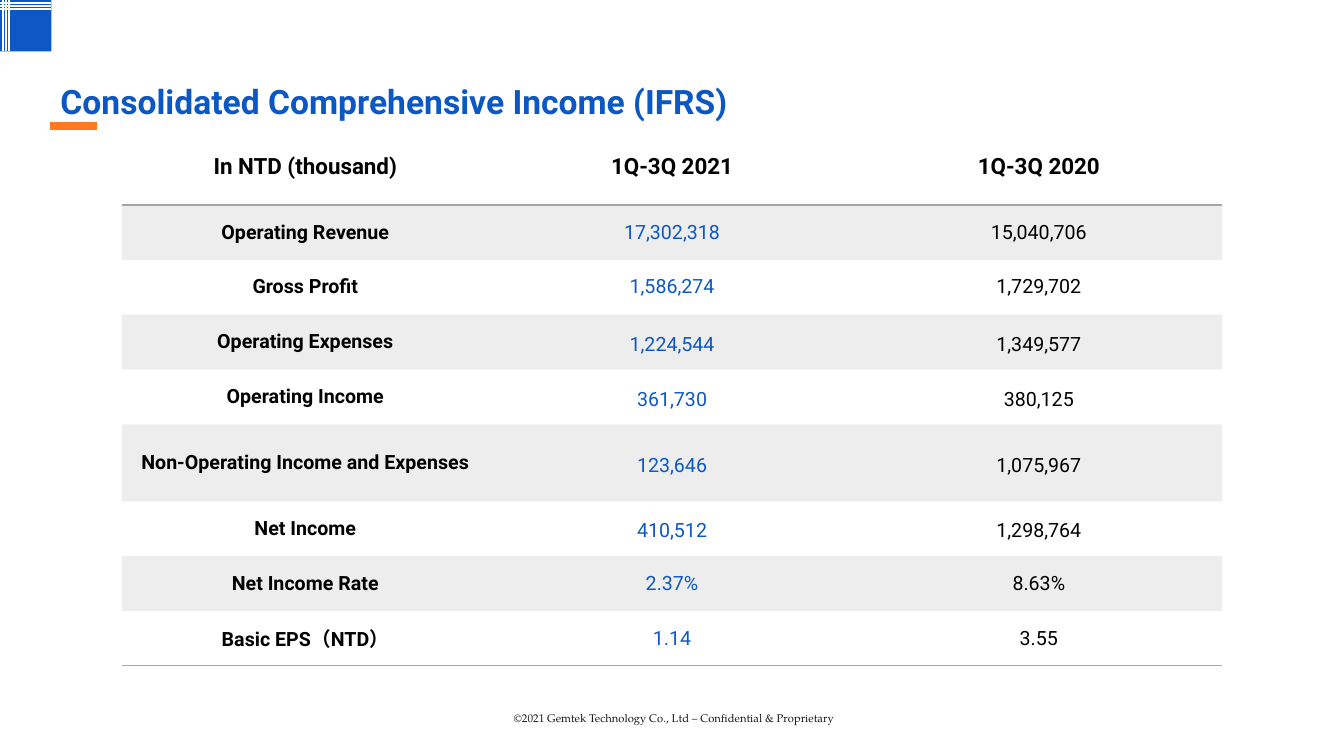
from dataclasses import dataclass

from lxml.etree import SubElement
from pptx import Presentation
from pptx.dml.color import RGBColor
from pptx.enum.shapes import MSO_CONNECTOR, MSO_SHAPE
from pptx.enum.text import MSO_ANCHOR, MSO_AUTO_SIZE, PP_ALIGN
from pptx.oxml.ns import qn
from pptx.slide import Slide
from pptx.table import Table, _Cell
from pptx.util import Pt

BLUE = RGBColor(0x0D, 0x58, 0xC4)
TITLE_BLUE = RGBColor(0x0B, 0x58, 0xC4)
ORANGE = RGBColor(0xFF, 0x78, 0x22)
GREY = RGBColor(0xA5, 0xA5, 0xA5)
DARK = RGBColor(0x18, 0x17, 0x17)
BLACK = RGBColor(0, 0, 0)
WHITE = RGBColor(0xFF, 0xFF, 0xFF)

FONT = "Roboto"
PLAIN_STYLE = "{2D5ABB26-0587-4C30-8999-92F81FD0307C}"
MARK = 36.7  # side of the corner square
LEFT, TOP, COL_WIDTH = 87.1, 91.4, 262
LOW, TALL = 39.2, 55


@dataclass
class Row:
    label: str
    now: str
    past: str
    height: float = LOW
    drop: float = 0  # top margin of the figures


@dataclass
class Stripe:
    place: float
    weight: float


HEAD = Row("In NTD (thousand)", "1Q-3Q 2021", "1Q-3Q 2020", TALL)
ROWS = [
    Row("Operating Revenue", "17,302,318", "15,040,706"),
    Row("Gross Profit", "1,586,274", "1,729,702"),
    Row("Operating Expenses", "1,224,544", "1,349,577", drop=3.6),
    Row("Operating Income", "361,730", "380,125", drop=3.6),
    Row("Non-Operating Income and Expenses", "123,646", "1,075,967", TALL, 3.6),
    Row("Net Income", "410,512", "1,298,764", drop=3.6),
    Row("Net Income Rate", "2.37%", "8.63%"),
    Row("Basic EPS（NTD）", "1.14", "3.55"),
]
STRIPES = [Stripe(2, 1.5), Stripe(4.3, 1), Stripe(6, 0.5), Stripe(6.8, 0.25)]


def draw_line(slide: Slide, x1: float, y1: float, x2: float, y2: float,
              color: RGBColor, weight: float) -> None:
    line = slide.shapes.add_connector(
        MSO_CONNECTOR.STRAIGHT, Pt(x1), Pt(y1), Pt(x2), Pt(y2))
    line.line.color.rgb = color
    line.line.width = Pt(weight)
    SubElement(line._element.spPr, qn("a:effectLst"))


def draw_mark(slide: Slide) -> None:
    square = slide.shapes.add_shape(MSO_SHAPE.RECTANGLE, 0, 0, Pt(MARK), Pt(MARK))
    square.shadow.inherit = False
    square.fill.solid()
    square.fill.fore_color.rgb = BLUE
    square.line.fill.background()
    for stripe in STRIPES:
        draw_line(slide, stripe.place, 0, stripe.place, MARK, WHITE, stripe.weight)
        draw_line(slide, MARK, stripe.place, 0, stripe.place, WHITE, stripe.weight)


def draw_title(slide: Slide) -> None:
    title = slide.shapes.title
    title.left, title.top, title.width, title.height = Pt(36), Pt(59.8), Pt(879), Pt(28.8)
    frame = title.text_frame
    frame.text = "Consolidated Comprehensive Income (IFRS)"
    frame.auto_size = MSO_AUTO_SIZE.NONE
    frame.vertical_anchor = MSO_ANCHOR.MIDDLE
    para = frame.paragraphs[0]
    para.alignment = PP_ALIGN.LEFT
    para.line_spacing = 0.9
    para.font.name, para.font.size, para.font.bold = FONT, Pt(24), True
    para.font.color.rgb = TITLE_BLUE


def draw_foot(slide: Slide) -> None:
    box = slide.shapes.add_textbox(Pt(357.1), Pt(504.7), Pt(246.2), Pt(17.3))
    frame = box.text_frame
    frame.word_wrap = False
    frame.auto_size = MSO_AUTO_SIZE.SHAPE_TO_FIT_TEXT
    para = frame.paragraphs[0]
    para.text = "©2021 Gemtek Technology Co., Ltd – Confidential & Proprietary"
    para.alignment = PP_ALIGN.RIGHT
    para.font.name, para.font.size = "TeX Gyre Pagella", Pt(8)
    para.font.color.rgb = DARK


def shade(cell: _Cell) -> None:
    cell.fill.solid()
    cell.fill.fore_color.rgb = GREY
    tint = next(cell._tc.tcPr.iter(qn("a:srgbClr")))
    SubElement(tint, qn("a:alpha"), val="20000")


def rule_off(cell: _Cell) -> None:
    props = cell._tc.get_or_add_tcPr()
    edge = SubElement(props, qn("a:lnB"), w=str(Pt(1)))
    fill = SubElement(edge, qn("a:solidFill"))
    SubElement(fill, qn("a:srgbClr"), val=str(GREY))
    props.insert(0, edge)


def fill_row(table: Table, index: int, row: Row) -> None:
    table.rows[index].height = Pt(row.height)
    is_head = index == 0
    for col, text in enumerate((row.label, row.now, row.past)):
        cell = table.cell(index, col)
        cell.margin_left = cell.margin_right = cell.margin_bottom = 0
        cell.margin_top = Pt(row.drop if col else 0)
        cell.vertical_anchor = MSO_ANCHOR.MIDDLE
        para = cell.text_frame.paragraphs[0]
        para.text = text
        para.alignment = PP_ALIGN.CENTER
        para.font.name = FONT
        para.font.size = Pt(16 if is_head else 14)
        para.font.bold = is_head or col == 0
        para.font.color.rgb = BLUE if col == 1 and not is_head else BLACK
        if index % 2:
            shade(cell)
        else:
            cell.fill.background()
        if index in (0, len(ROWS)):
            rule_off(cell)


def draw_table(slide: Slide) -> None:
    rows = [HEAD, *ROWS]
    height = sum(row.height for row in rows)
    frame = slide.shapes.add_table(
        len(rows), 3, Pt(LEFT), Pt(TOP), Pt(3 * COL_WIDTH), Pt(height))
    table = frame.table
    table.first_row = table.horz_banding = False
    table._tbl.tblPr.find(qn("a:tableStyleId")).text = PLAIN_STYLE
    for col in table.columns:
        col.width = Pt(COL_WIDTH)
    for index, row in enumerate(rows):
        fill_row(table, index, row)


def main() -> None:
    deck = Presentation()
    deck.slide_width, deck.slide_height = Pt(960), Pt(540)
    slide = deck.slides.add_slide(deck.slide_layouts[5])

    # Corner mark, accent and footer
    draw_mark(slide)
    draw_line(slide, 36, 90, 69, 90, ORANGE, 6)
    draw_foot(slide)

    # Title and income table
    draw_title(slide)
    draw_table(slide)
    deck.save("out.pptx")


if __name__ == "__main__":
    main()
